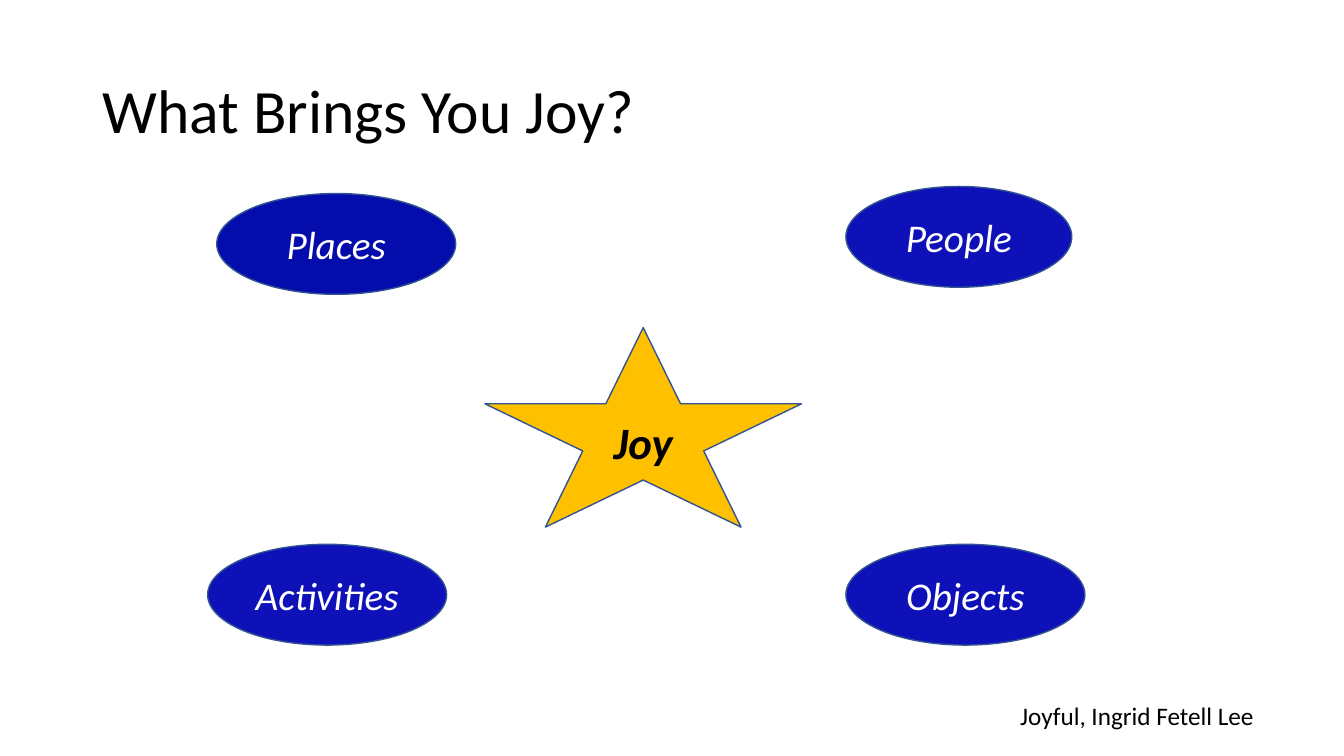
from pptx import Presentation
from pptx.dml.color import RGBColor
from pptx.enum.shapes import MSO_SHAPE as Shape
from pptx.enum.text import MSO_ANCHOR as Anchor, MSO_AUTO_SIZE as AutoSize, PP_ALIGN as Align
from pptx.util import Emu, Pt

PX = 9144


def color(value):
    return RGBColor.from_string(value)


def write(frame, text, size, ink="000000", align=Align.LEFT, bold=False, italic=False):
    paragraph = frame.paragraphs[0]
    paragraph.alignment = align
    run = paragraph.add_run()
    run.text = text
    font = run.font
    font.name, font.size, font.bold, font.italic = "Calibri", Pt(size), bold, italic
    font.color.rgb = color(ink)
    return paragraph


deck = Presentation()
deck.slide_width, deck.slide_height = Emu(1333 * PX), Emu(750 * PX)
slide = deck.slides.add_slide(deck.slide_layouts[6])

title = slide.shapes.add_textbox(*(Emu(n * PX) for n in (92, 40, 1150, 145))).text_frame
title.word_wrap = True
title.vertical_anchor = Anchor.MIDDLE
write(title, "What Brings You Joy?", 44).line_spacing = 0.9

joy_sources = [
    ("Joy", Shape.STAR_5_POINT, (481, 325, 314, 198), "FFC000", "000000", 32, True),
    ("Places", Shape.OVAL, (215, 192, 237, 100), "040CAC", "FFFFFF", 28, False),
    ("Activities", Shape.OVAL, (206, 540, 237, 100), "0D11B7", "FFFFFF", 28, False),
    ("People", Shape.OVAL, (839, 185, 224, 100), "0D11B7", "FFFFFF", 28, False),
    ("Objects", Shape.OVAL, (839, 540, 237, 100), "0D11B7", "FFFFFF", 28, False),
]
for label, outline, box, fill, ink, size, bold in joy_sources:
    source = slide.shapes.add_shape(outline, *(Emu(n * PX) for n in box))
    source.shadow.inherit = False
    source.fill.solid()
    source.fill.fore_color.rgb = color(fill)
    source.line.color.rgb = color("325491")
    source.line.width = Pt(1)
    source.text_frame.word_wrap = True
    source.text_frame.vertical_anchor = Anchor.MIDDLE
    write(source.text_frame, label, size, ink, Align.CENTER, bold, italic=True)

credit = slide.shapes.add_textbox(*(Emu(n * PX) for n in (1002, 690, 255, 40))).text_frame
credit.word_wrap = False
credit.auto_size = AutoSize.SHAPE_TO_FIT_TEXT
write(credit, "Joyful, Ingrid Fetell Lee", 18)

deck.save("out.pptx")
